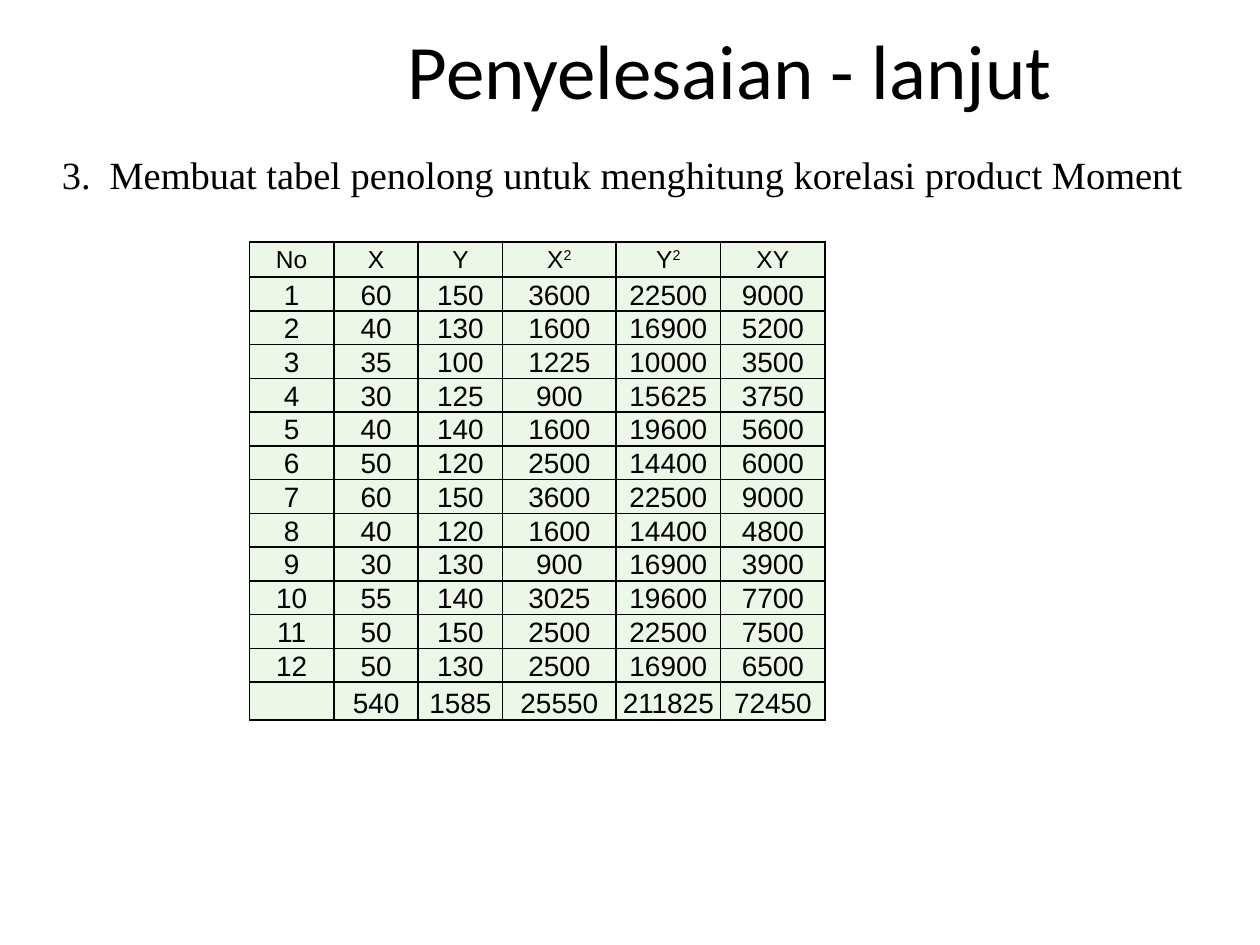
from dataclasses import dataclass

from lxml import etree
from pptx import Presentation, util as u
from pptx.dml.color import RGBColor
from pptx.enum import text
from pptx.oxml.ns import qn

TITLE = "Penyelesaian - lanjut"
STEP = "Membuat tabel penolong untuk menghitung korelasi product Moment"
STEP_NUMBER = 3
HEADERS = [("No", ""), ("X", ""), ("Y", ""), ("X", "2"), ("Y", "2"), ("XY", "")]
X = [60, 40, 35, 30, 40, 50, 60, 40, 30, 55, 50, 50]
Y = [150, 130, 100, 125, 140, 120, 150, 120, 130, 140, 150, 130]

TITLE_BOX = (1.92, 0.42, 7.75, 0.25)
STEP_BOX = (0.39, 1.15, 9.42, 0.47)
STEP_INDENT = 0.38
TABLE_LEFT, TABLE_TOP = 1.98, 1.92
COLUMNS = [0.67, 0.67, 0.67, 0.9, 0.83, 0.83]
HEADER_HEIGHT, ROW_HEIGHT = 0.28, 0.268


@dataclass(frozen=True)
class Theme:
    ink: str = "000000"
    cell: str = "ECF7E8"
    title: tuple = ("Calibri", 44)
    step: tuple = ("Times New Roman", 22)
    header: tuple = ("Arial", 14)
    number: tuple = ("Arial", 16)
    border: float = 1


THEME = Theme()


def add_run(p, content, style):
    r = p.add_run()
    r.text = content
    r.font.name, size = style
    r.font.size = u.Pt(size)
    r.font.color.rgb = RGBColor.from_string(THEME.ink)
    return r


def place(sp, box):
    sp.left, sp.top, sp.width, sp.height = map(u.Inches, box)


def add_title(s):
    sp = s.shapes.title
    place(sp, TITLE_BOX)
    tf = sp.text_frame
    tf.auto_size = text.MSO_AUTO_SIZE.NONE
    tf.vertical_anchor = text.MSO_ANCHOR.MIDDLE
    p = tf.paragraphs[0]
    p.alignment = text.PP_ALIGN.CENTER
    add_run(p, TITLE, THEME.title)


def add_step(s):
    sp = s.placeholders[1]
    place(sp, STEP_BOX)
    tf = sp.text_frame
    tf.auto_size = text.MSO_AUTO_SIZE.SHAPE_TO_FIT_TEXT
    p = tf.paragraphs[0]
    p.space_before = u.Pt(0)
    pPr = p._p.get_or_add_pPr()
    indent = u.Inches(STEP_INDENT)
    pPr.set("marL", str(indent))
    pPr.set("indent", str(-indent))
    etree.SubElement(pPr, qn("a:buFont"), typeface="+mj-lt")
    etree.SubElement(pPr, qn("a:buAutoNum"), type="arabicPeriod", startAt=str(STEP_NUMBER))
    add_run(p, STEP, THEME.step)


def helper_rows():
    """Numbered rows of X, Y, X², Y² and XY, closed by the column totals."""
    products = [(x, y, x * x, y * y, x * y) for x, y in zip(X, Y)]
    totals = [sum(column) for column in zip(*products)]
    return [(n, *row) for n, row in enumerate(products, 1)] + [("", *totals)]


def format_cell(cell, anchor):
    cell.margin_left = cell.margin_right = cell.margin_top = cell.margin_bottom = 0
    cell.vertical_anchor = anchor
    tcPr = cell._tc.get_or_add_tcPr()
    for side in ("lnL", "lnR", "lnT", "lnB"):
        ln = etree.SubElement(tcPr, qn(f"a:{side}"), w=str(u.Pt(THEME.border)))
        fill = etree.SubElement(ln, qn("a:solidFill"))
        etree.SubElement(fill, qn("a:srgbClr"), val=THEME.ink)
    cell.fill.solid()
    cell.fill.fore_color.rgb = RGBColor.from_string(THEME.cell)
    p = cell.text_frame.paragraphs[0]
    p.alignment = text.PP_ALIGN.CENTER
    return p


def add_helper_table(s):
    rows = helper_rows()
    heights = [HEADER_HEIGHT] + [ROW_HEIGHT] * len(rows)
    box = (TABLE_LEFT, TABLE_TOP, sum(COLUMNS), sum(heights))
    table = s.shapes.add_table(len(heights), len(COLUMNS), *map(u.Inches, box)).table
    for column, width in zip(table.columns, COLUMNS):
        column.width = u.Inches(width)
    for row, height in zip(table.rows, heights):
        row.height = u.Inches(height)

    for c, (label, power) in enumerate(HEADERS):
        p = format_cell(table.cell(0, c), text.MSO_ANCHOR.MIDDLE)
        add_run(p, label, THEME.header)
        if power:
            r = add_run(p, power, THEME.header)
            r.font._element.set("baseline", "30000")
    for i, row in enumerate(rows, 1):
        for c, value in enumerate(row):
            p = format_cell(table.cell(i, c), text.MSO_ANCHOR.BOTTOM)
            add_run(p, str(value), THEME.number)


def main():
    prs = Presentation()
    prs.slide_width, prs.slide_height = u.Inches(10), u.Inches(7.5)
    s = prs.slides.add_slide(prs.slide_layouts.get_by_name("Title and Content"))
    add_title(s)
    add_step(s)
    add_helper_table(s)
    prs.save("out.pptx")


if __name__ == "__main__":
    main()
